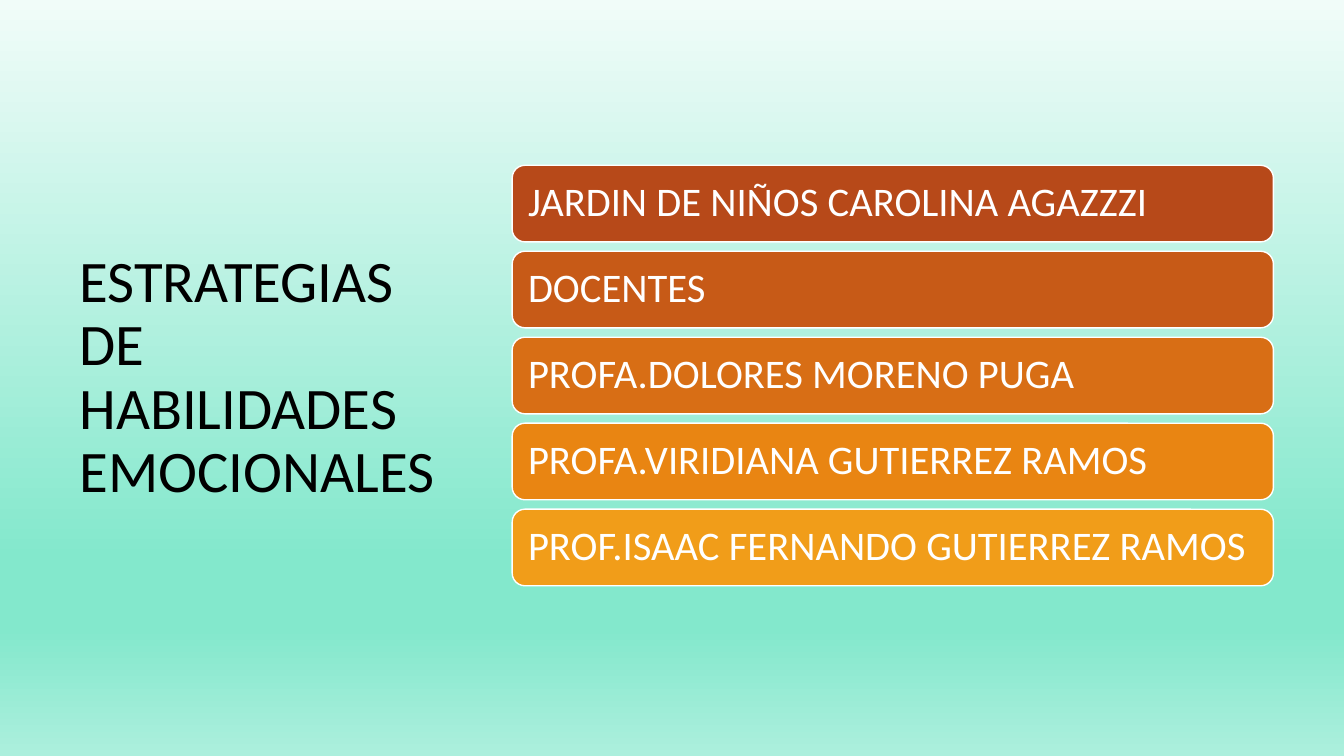
from copy import deepcopy

from pptx import Presentation
from pptx.dml.color import RGBColor
from pptx.enum.shapes import MSO_SHAPE
from pptx.enum.text import MSO_ANCHOR, PP_ALIGN
from pptx.oxml.ns import qn
from pptx.util import Inches, Pt

ROUNDED = MSO_SHAPE.ROUNDED_RECTANGLE
MIDDLE = MSO_ANCHOR.MIDDLE
LEFT = PP_ALIGN.LEFT

BACKGROUND_STOPS = [(0, "F1FCF9"), (0.74, "83E8CC"), (0.83, "83E8CC"), (1, "ACEFDD")]
TITLE = "ESTRATEGIAS DE HABILIDADES EMOCIONALES"
CREDITS = [
    ("JARDIN DE NIÑOS CAROLINA AGAZZZI", "B74919"),
    ("DOCENTES", "C75A17"),
    ("PROFA.DOLORES MORENO PUGA", "D86E15"),
    ("PROFA.VIRIDIANA GUTIERREZ RAMOS", "E98512"),
    ("PROF.ISAAC FERNANDO GUTIERREZ RAMOS", "F19D19"),
]
BAR_TOP, BAR_PITCH = 1.64, 0.853


def color(hex_value):
    return RGBColor.from_string(hex_value)


def set_attributes(target, values):
    for name, value in values.items():
        setattr(target, name, value)


def paint_background(slide):
    fill = slide.background.fill
    fill.gradient()
    fill.gradient_angle = 270
    # The default gradient has two stops; add the missing ones
    stop_list = slide.element.find(".//" + qn("a:gsLst"))
    while len(stop_list) < len(BACKGROUND_STOPS):
        stop_list.append(deepcopy(stop_list[0]))
    for stop, (position, hex_value) in zip(fill.gradient_stops, BACKGROUND_STOPS):
        stop.color.rgb = color(hex_value)
        stop.position = position


def write_text(holder, text, size, hex_value, inset_x, inset_y):
    frame = holder.text_frame
    set_attributes(frame, {
        "word_wrap": True, "vertical_anchor": MIDDLE,
        "margin_left": Inches(inset_x), "margin_right": Inches(inset_x),
        "margin_top": Inches(inset_y), "margin_bottom": Inches(inset_y),
    })
    paragraph = frame.paragraphs[0]
    set_attributes(paragraph, {"text": text, "alignment": LEFT, "line_spacing": 0.9})
    set_attributes(paragraph.font, {"name": "Calibri", "size": Pt(size)})
    paragraph.font.color.rgb = color(hex_value)


def add_title(slide):
    title = slide.shapes.add_textbox(Inches(0.69), Inches(0.7), Inches(3.74), Inches(6.11))
    write_text(title, TITLE, 42, "000000", 0.1, 0.05)


def add_credit_bar(slide, top, text, fill_hex):
    bar = slide.shapes.add_shape(ROUNDED, Inches(5.08), Inches(top), Inches(7.55), Inches(0.76))
    bar.shadow.inherit = False
    bar.fill.solid()
    bar.fill.fore_color.rgb = color(fill_hex)
    bar.line.color.rgb = color("FFFFFF")
    bar.line.width = Pt(1)
    write_text(bar, text, 29, "FFFFFF", 0.12, 0.12)


def main():
    deck = Presentation()
    set_attributes(deck, {"slide_width": Inches(13.33), "slide_height": Inches(7.5)})
    slide = deck.slides.add_slide(deck.slide_layouts[6])
    paint_background(slide)
    add_title(slide)
    # Stack of school and teacher names
    for row, (text, fill_hex) in enumerate(CREDITS):
        add_credit_bar(slide, BAR_TOP + row * BAR_PITCH, text, fill_hex)
    deck.save("out.pptx")


if __name__ == "__main__":
    main()
